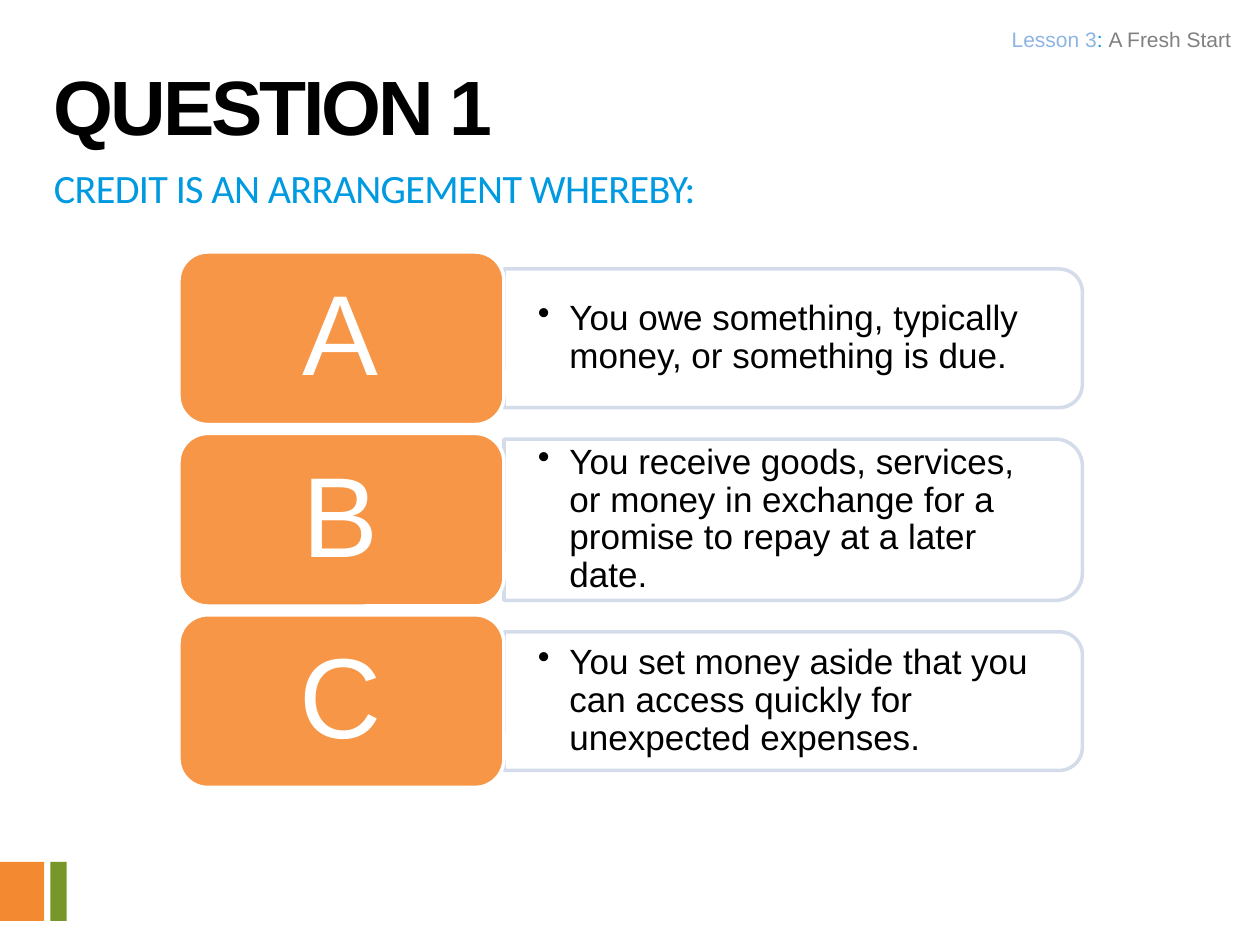
from lxml.etree import SubElement
from pptx import Presentation
from pptx.dml.color import RGBColor
from pptx.enum.shapes import MSO_SHAPE as Preset
from pptx.enum.text import MSO_ANCHOR as Anchor, PP_ALIGN as Align
from pptx.oxml.ns import qn
from pptx.util import Inches, Pt

WHITE = RGBColor(0xFF, 0xFF, 0xFF)
BLACK = RGBColor(0, 0, 0)
ORANGE = RGBColor(0xF7, 0x96, 0x46)
PALE_BLUE = RGBColor(0xD0, 0xD8, 0xE8)
SKY = RGBColor(0x00, 0x9A, 0xE1)
SOFT_BLUE = RGBColor(0x8E, 0xB4, 0xE3)
GREY = RGBColor(0x80, 0x80, 0x80)
MARK_ORANGE = RGBColor(0xF3, 0x8A, 0x31)
MARK_GREEN = RGBColor(0x77, 0x97, 0x2B)

ANSWERS = [
    ("A", "You owe something, typically money, or something is due.", 1.1),
    ("B", "You receive goods, services, or money in exchange for a promise to repay at a later date.", 1.28),
    ("C", "You set money aside that you can access quickly for unexpected expenses.", 1.1),
]


def add_block(page, preset, left, top, width, height, fill, line=None):
    """Add a filled shape, outlined only when a line colour is given."""
    block = page.shapes.add_shape(preset, Inches(left), Inches(top), Inches(width), Inches(height))
    block.shadow.inherit = False
    block.fill.solid()
    block.fill.fore_color.rgb = fill
    if line is None:
        block.line.fill.background()
    else:
        block.line.color.rgb = line
        block.line.width = Pt(2)
    return block


def add_text_box(page, left, top, width, height, inset=(0.1, 0.05), anchor=Anchor.TOP):
    """Add a wrapping text box and return its first paragraph."""
    box = page.shapes.add_textbox(Inches(left), Inches(top), Inches(width), Inches(height))
    frame = box.text_frame
    frame.word_wrap = True
    frame.vertical_anchor = anchor
    frame.margin_left = frame.margin_right = Inches(inset[0])
    frame.margin_top = frame.margin_bottom = Inches(inset[1])
    return frame.paragraphs[0]


def add_span(para, text, size, color, font="Arial", bold=False, spacing=0):
    """Add one run, with letter spacing in points."""
    span = para.add_run()
    span.text = text
    span.font.name = font
    span.font.size = Pt(size)
    span.font.bold = bold
    span.font.color.rgb = color
    if spacing:
        span.font._element.set("spc", str(round(spacing * 100)))


def add_bullet(para, indent):
    """Give a paragraph a hanging round bullet."""
    props = para._p.get_or_add_pPr()
    props.set("marL", str(Inches(indent)))
    props.set("indent", str(-Inches(indent)))
    SubElement(props, qn("a:buChar"), char="•")


def add_answer(page, left, top, width, height, letter, answer, card_height):
    """Draw one answer row: a text card behind a lettered tile."""
    tile_width = 2.58
    card_left, card_width = left + tile_width, width - tile_width
    middle = top + height / 2
    card = add_block(page, Preset.ROUND_2_SAME_RECTANGLE,
                     card_left + (card_width - card_height) / 2, middle - card_width / 2,
                     card_height, card_width, WHITE, PALE_BLUE)
    card.rotation = 90
    for color in card._element.spPr.iter(qn("a:srgbClr")):
        SubElement(color, qn("a:alpha"), val="90000")

    text_height = card_height - 0.11
    para = add_text_box(page, card_left, middle - text_height / 2, card_width - 0.06,
                        text_height, (0.27, 0.14), Anchor.MIDDLE)
    add_bullet(para, 0.25)
    para.line_spacing = 0.9
    add_span(para, answer, 20, BLACK)

    add_block(page, Preset.ROUNDED_RECTANGLE, left, top, tile_width, height, ORANGE, WHITE)
    para = add_text_box(page, left + 0.06, top + 0.07, tile_width - 0.13, height - 0.13,
                        (0.27, 0.14), Anchor.MIDDLE)
    para.alignment = Align.CENTER
    para.line_spacing = 0.9
    add_span(para, letter, 65, WHITE)


def add_answers(page, left, top, width, row_height, pitch):
    """Stack the answer rows at an equal pitch."""
    for row, (letter, answer, card_height) in enumerate(ANSWERS):
        add_answer(page, left, top + row * pitch, width, row_height, letter, answer, card_height)


def add_heading(page, left, top, width):
    """Place the question title and the prompt under it."""
    para = add_text_box(page, left, top, width, 0.83)
    para.line_spacing = Pt(59)
    add_span(para, "QUESTION 1", 44, BLACK, bold=True, spacing=-1.8)
    para = add_text_box(page, left, top + 0.92, width, 1)
    add_span(para, "CREDIT IS AN ARRANGEMENT WHEREBY:", 23, SKY, font="Calibri", spacing=-0.4)


def add_lesson_label(page, left, top, width, height):
    """Place the right-aligned lesson label."""
    para = add_text_box(page, left, top, width, height, (0.08, 0.04))
    para.alignment = Align.RIGHT
    for text, color in [("Lesson 3", SOFT_BLUE), (": ", SKY), ("A Fresh Start", GREY)]:
        add_span(para, text, 12, color)


def add_corner_mark(page, left, top, height):
    """Draw the two corner bars."""
    add_block(page, Preset.RECTANGLE, left, top, 0.35, height, MARK_ORANGE)
    add_block(page, Preset.RECTANGLE, left + 0.4, top, 0.13, height, MARK_GREEN)


def main():
    """Build and save the deck."""
    deck = Presentation()
    deck.slide_width, deck.slide_height = Inches(10), Inches(7.5)
    page = deck.slides.add_slide(deck.slide_layouts[6])
    add_corner_mark(page, 0, 6.84, 0.47)
    add_answers(page, 1.42, 2, 7.17, 1.37, 1.44)
    add_lesson_label(page, 4, 0.17, 5.85, 0.32)
    add_heading(page, 0.33, 0.33, 9.5)
    deck.save("out.pptx")


if __name__ == "__main__":
    main()
